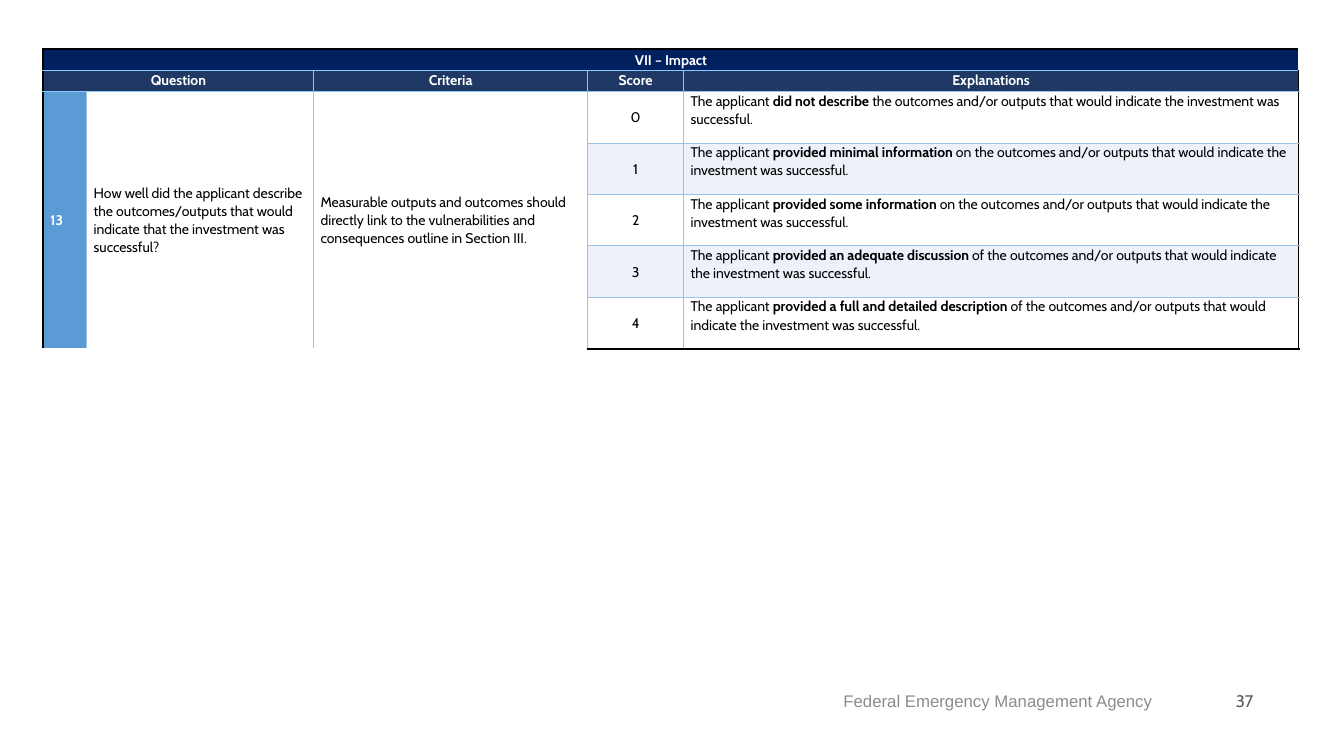
"""Build the scoring rubric slide for the Impact section."""
from dataclasses import dataclass
from itertools import product

from lxml.etree import SubElement
from pptx import Presentation
from pptx.dml.color import RGBColor
from pptx.enum.text import MSO_ANCHOR, PP_ALIGN
from pptx.oxml.ns import qn
from pptx.slide import Slide
from pptx.table import Table, _Cell
from pptx.text.text import TextFrame
from pptx.util import Pt

EMU_PER_PX = 9144


@dataclass(frozen=True)
class Theme:
    """Colours, fonts and type sizes of the slide."""
    title_fill: str = "002060"
    header_fill: str = "1F3864"
    number_fill: str = "5B9BD5"
    band_fill: str = "EDF1F9"
    white: str = "FFFFFF"
    black: str = "000000"
    grid: str = "9CC2E5"
    header_rule: str = "85C9FF"
    agency: str = "8C8C8C"
    page_number: str = "5A5B5D"
    body_font: str = "Cabin"
    agency_font: str = "Arial"
    table_size: int = 10
    footer_size: int = 12
    line_spacing: float = 1.07
    grid_width: float = 1
    frame_width: float = 1.5


THEME = Theme()


@dataclass(frozen=True)
class Block:
    """A table cell or merged area; vertical bars switch bold on and off."""
    row: int
    column: int
    text: str
    fill: str = ""
    color: str = THEME.black
    rows: int = 1
    columns: int = 1
    bold: bool = False
    align: PP_ALIGN = PP_ALIGN.LEFT
    anchor: MSO_ANCHOR = MSO_ANCHOR.MIDDLE


@dataclass(frozen=True)
class FooterItem:
    """A right-aligned footer text."""
    text: str
    left: int
    width: int
    font: str
    color: str


COLUMN_WIDTHS = (43, 225, 272, 95, 610)
ROW_HEIGHTS = (21, 21, 51, 51, 51, 51, 51)
FIRST_SCORE_ROW = 2
LAST_ROW = len(ROW_HEIGHTS) - 1
LAST_COLUMN = len(COLUMN_WIDTHS) - 1
HEADERS = ((0, 2, "Question"), (2, 1, "Criteria"), (3, 1, "Score"), (4, 1, "Explanations"))
QUESTION = (
    ("13", THEME.number_fill, THEME.white, True),
    ("How well did the applicant describe the outcomes/outputs that would indicate "
     "that the investment was successful?", "", THEME.black, False),
    ("Measurable outputs and outcomes should directly link to the vulnerabilities and "
     "consequences outline in Section III.", "", THEME.black, False),
)
RATINGS = (
    "|did not describe|",
    "|provided minimal information| on",
    "|provided some information| on",
    "|provided an adequate discussion| of",
    "|provided a full and detailed description| of",
)
FOOTER = (
    FooterItem("Federal Emergency Management Agency", 667, 486, THEME.agency_font, THEME.agency),
    FooterItem("37", 1153, 100, THEME.body_font, THEME.page_number),
)


def px(length: int) -> int:
    """Turn px into EMU."""
    return length * EMU_PER_PX


def rubric_blocks() -> list[Block]:
    """List every block of the rubric."""
    blocks = [Block(0, 0, "VII – Impact", THEME.title_fill, THEME.white,
                    columns=len(COLUMN_WIDTHS), bold=True, align=PP_ALIGN.CENTER)]
    for column, span, label in HEADERS:
        blocks.append(Block(1, column, label, THEME.header_fill, THEME.white, columns=span,
                            bold=True, align=PP_ALIGN.CENTER, anchor=MSO_ANCHOR.TOP))
    for column, (text, fill, color, bold) in enumerate(QUESTION):
        blocks.append(Block(FIRST_SCORE_ROW, column, text, fill, color,
                            rows=len(RATINGS), bold=bold))
    for score, rating in enumerate(RATINGS):
        row = FIRST_SCORE_ROW + score
        fill = THEME.band_fill if score % 2 else ""
        explanation = (f"The applicant {rating} the outcomes and/or outputs that would "
                       "indicate the investment was successful.")
        blocks.append(Block(row, 3, str(score), fill, align=PP_ALIGN.CENTER))
        blocks.append(Block(row, 4, explanation, fill, anchor=MSO_ANCHOR.TOP))
    return blocks


def write_text(frame: TextFrame, text: str, font: str, size: int, color: str,
               align: PP_ALIGN, bold: bool = False) -> None:
    """Write one paragraph, making the parts between vertical bars bold."""
    para = frame.paragraphs[0]
    para.alignment = align
    for index, part in enumerate(text.split("|")):
        span = para.add_run()
        span.text = part
        span.font.name = font
        span.font.size = Pt(size)
        span.font.bold = bold or index % 2 == 1
        span.font.color.rgb = RGBColor.from_string(color)


def add_border(cell: _Cell, side: str, color: str, width: float) -> None:
    """Draw one side of a cell."""
    line = SubElement(cell._tc.get_or_add_tcPr(), qn(f"a:ln{side}"), w=str(Pt(width)))
    fill = SubElement(line, qn("a:solidFill"))
    SubElement(fill, qn("a:srgbClr"), val=color)


def draw_borders(cell: _Cell, block: Block, row: int, column: int) -> None:
    """Draw the sides of a cell that lie on the edge of its block."""
    last_row = block.row + block.rows - 1
    last_column = block.column + block.columns - 1
    under_header = row == 1 and column < 3 or row == FIRST_SCORE_ROW and column < 3
    sides = (
        ("L", column == block.column, column == 0, False),
        ("R", column == last_column, column == LAST_COLUMN, False),
        ("T", row == block.row, row == 0, row == 1 or under_header),
        ("B", row == last_row, row == LAST_ROW, row == 0 or row == 1 and under_header),
    )
    for side, on_edge, on_frame, on_header in sides:
        if on_edge and on_frame:
            add_border(cell, side, THEME.black, THEME.frame_width)
        elif on_edge:
            add_border(cell, side, THEME.header_rule if on_header else THEME.grid,
                       THEME.grid_width)


def draw_block(table: Table, block: Block) -> None:
    """Merge, border, fill and write one block."""
    rows = range(block.row, block.row + block.rows)
    columns = range(block.column, block.column + block.columns)
    first = table.cell(block.row, block.column)
    if block.rows * block.columns > 1:
        first.merge(table.cell(rows[-1], columns[-1]))
    for row, column in product(rows, columns):
        cell = table.cell(row, column)
        draw_borders(cell, block, row, column)
        if block.fill:
            cell.fill.solid()
            cell.fill.fore_color.rgb = RGBColor.from_string(block.fill)
        else:
            cell.fill.background()
        cell.margin_left = cell.margin_right = px(7)
        cell.margin_top = cell.margin_bottom = 0
    first.vertical_anchor = block.anchor
    write_text(first.text_frame, block.text, THEME.body_font, THEME.table_size,
               block.color, block.align, block.bold)
    first.text_frame.paragraphs[0].line_spacing = THEME.line_spacing


def draw_rubric(page: Slide) -> None:
    """Add the rubric table."""
    frame = page.shapes.add_table(len(ROW_HEIGHTS), len(COLUMN_WIDTHS), px(43), px(49),
                                  px(sum(COLUMN_WIDTHS)), px(sum(ROW_HEIGHTS)))
    table = frame.table
    table.first_row = table.horz_banding = False
    for column, width in zip(table.columns, COLUMN_WIDTHS):
        column.width = px(width)
    for row, height in zip(table.rows, ROW_HEIGHTS):
        row.height = px(height)
    for block in rubric_blocks():
        draw_block(table, block)


def draw_footer(page: Slide, item: FooterItem) -> None:
    """Add one footer text."""
    box = page.shapes.add_textbox(px(item.left), px(675), px(item.width), px(40))
    box.text_frame.word_wrap = True
    box.text_frame.vertical_anchor = MSO_ANCHOR.MIDDLE
    write_text(box.text_frame, item.text, item.font, THEME.footer_size, item.color,
               PP_ALIGN.RIGHT)


def main() -> None:
    """Build and save the deck."""
    deck = Presentation()
    deck.slide_width, deck.slide_height = px(1333), px(750)
    page = deck.slides.add_slide(deck.slide_layouts[6])
    draw_rubric(page)
    for item in FOOTER:
        draw_footer(page, item)
    deck.save("out.pptx")


if __name__ == "__main__":
    main()
